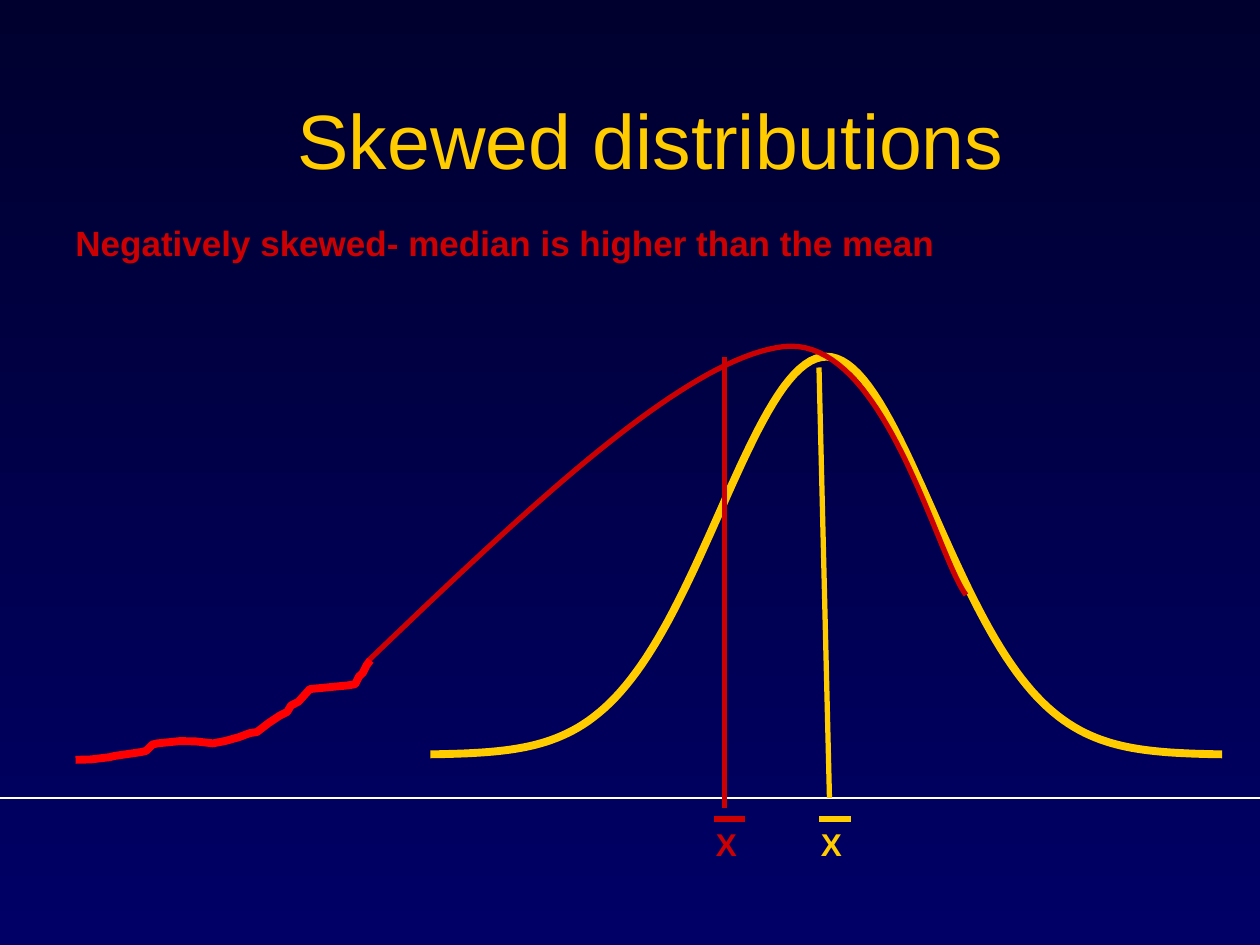
from math import exp

from lxml.etree import SubElement
from pptx import Presentation
from pptx.dml.color import RGBColor
from pptx.enum.shapes import MSO_CONNECTOR
from pptx.enum.text import MSO_ANCHOR, PP_ALIGN
from pptx.oxml.ns import qn
from pptx.util import Pt

NIGHT = RGBColor(0x00, 0x00, 0x2F)
NAVY = RGBColor(0x00, 0x00, 0x66)
GOLD = RGBColor(0xFF, 0xCC, 0x00)
CRIMSON = RGBColor(0xCC, 0x00, 0x00)
RED = RGBColor(0xFF, 0x00, 0x00)
WHITE = RGBColor(0xFF, 0xFF, 0xFF)

# Normal curve
CENTER, SIGMA, BASE, HEIGHT = 472.3, 61.3, 431.3, 227.5
CURVE_LEFT, CURVE_RIGHT, CURVE_STEPS = 246, 698.4, 150

# Skewed curve: two cubic Bezier arcs, each given by its four control points
RISE = [(210, 378), (300.5, 291.3), (391, 204.7), (448, 198)]
FALL = [(448, 198), (505, 192), (535, 317), (552, 340)]
ARC_STEPS = 40

TAIL = [
    (211.7, 377.3), (209.5, 380.2), (207.4, 384.5), (205.2, 386.6), (203, 391),
    (198.7, 391.7), (177.1, 393.8), (170.6, 401), (166.3, 403.2), (164.2, 406.8),
    (159.8, 409), (153.4, 413.3), (146.9, 418.3), (142.6, 419), (136.8, 421.2),
    (128.9, 423.4), (121.7, 424.8), (112, 423.7), (103, 423.5), (90, 424.8),
    (87.1, 425.5), (83.5, 429.1), (80.6, 429.8), (65.5, 432), (62.6, 432.7),
    (52, 434), (43.2, 434.2),
]


def bezier(p0, p1, p2, p3):
    points = []
    for step in range(ARC_STEPS + 1):
        t = step / ARC_STEPS
        weights = ((1 - t) ** 3, 3 * t * (1 - t) ** 2, 3 * t * t * (1 - t), t ** 3)
        points.append(tuple(sum(w * p[axis] for w, p in zip(weights, (p0, p1, p2, p3)))
                            for axis in (0, 1)))
    return points


def normal_curve():
    step = (CURVE_RIGHT - CURVE_LEFT) / CURVE_STEPS
    xs = [CURVE_LEFT + i * step for i in range(CURVE_STEPS + 1)]
    return [(x, BASE - HEIGHT * exp(-((x - CENTER) / SIGMA) ** 2 / 2)) for x in xs]


def add_curve(slide, points, color, width):
    start, *rest = [(Pt(x), Pt(y)) for x, y in points]
    builder = slide.shapes.build_freeform(*start)
    builder.add_line_segments(rest, close=False)
    curve = builder.convert_to_shape()
    curve.shadow.inherit = False
    curve.fill.background()
    curve.line.color.rgb = color
    curve.line.width = Pt(width)


def add_line(slide, x1, y1, x2, y2, color, width=3):
    line = slide.shapes.add_connector(
        MSO_CONNECTOR.STRAIGHT, Pt(x1), Pt(y1), Pt(x2), Pt(y2))
    line.line.color.rgb = color
    line.line.width = Pt(width)
    SubElement(line._element.spPr, qn("a:effectLst"))


def add_text(slide, text, left, top, width, height, size, color, bold=False,
             align=PP_ALIGN.LEFT, anchor=MSO_ANCHOR.TOP, spacing=None):
    frame = slide.shapes.add_textbox(Pt(left), Pt(top), Pt(width), Pt(height)).text_frame
    frame.word_wrap = True
    frame.vertical_anchor = anchor
    paragraph = frame.paragraphs[0]
    paragraph.alignment = align
    paragraph.line_spacing = spacing
    run = paragraph.add_run()
    run.text = text
    run.font.name = "Arial"
    run.font.size = Pt(size)
    run.font.bold = bold
    run.font.color.rgb = color


def add_mean_label(slide, text_left, bar_left, color):
    """X with a bar above it, the sign for a mean."""
    add_text(slide, "X", text_left, 468, 24, 29, 18, color, bold=True)
    add_line(slide, bar_left, 468, bar_left + 18, 468, color)


def set_background(slide):
    fill = slide.background.fill
    fill.gradient()
    fill.gradient_angle = 270
    for stop, color in zip(fill.gradient_stops, (NIGHT, NAVY)):
        stop.color.rgb = color


def main():
    prs = Presentation()
    prs.slide_width, prs.slide_height = Pt(720), Pt(540)
    slide = prs.slides.add_slide(prs.slide_layouts[6])
    set_background(slide)

    add_text(slide, "Skewed distributions", 48, 34, 648, 90, 44, GOLD,
             align=PP_ALIGN.CENTER, anchor=MSO_ANCHOR.MIDDLE)
    add_text(slide, "Negatively skewed- median is higher than the mean",
             36, 126, 558, 36, 20, CRIMSON, bold=True, spacing=0.9)

    add_curve(slide, normal_curve(), GOLD, 4.5)
    add_curve(slide, bezier(*RISE) + bezier(*FALL)[1:], CRIMSON, 3)

    add_line(slide, 0, 456, 720, 456, WHITE, 0.75)
    add_line(slide, 468, 210, 474, 456, GOLD)
    add_line(slide, 414, 204, 414, 462, CRIMSON)
    add_mean_label(slide, 462, 468, GOLD)
    add_mean_label(slide, 402, 408, CRIMSON)

    add_curve(slide, TAIL, RED, 4.5)
    prs.save("out.pptx")


if __name__ == "__main__":
    main()
